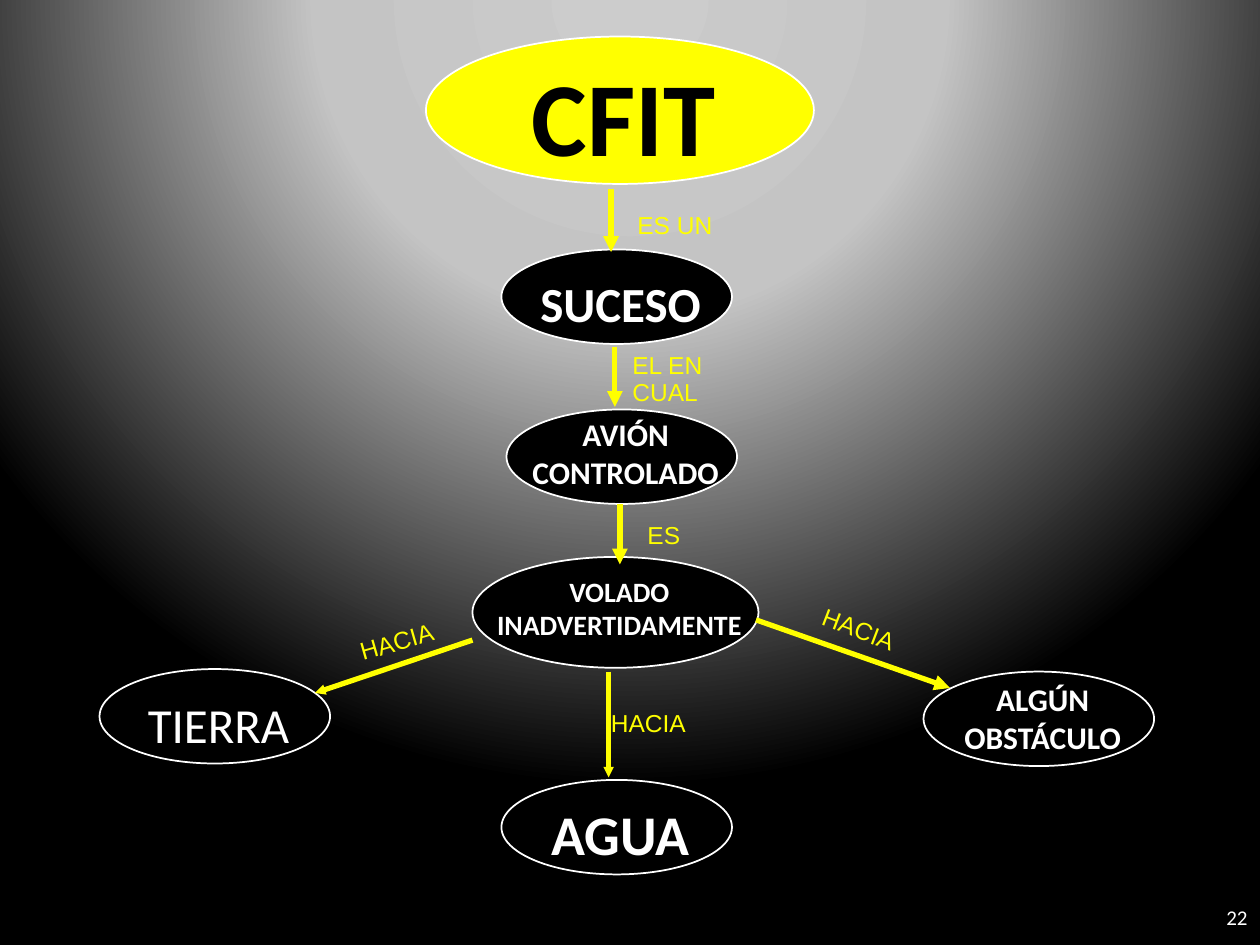
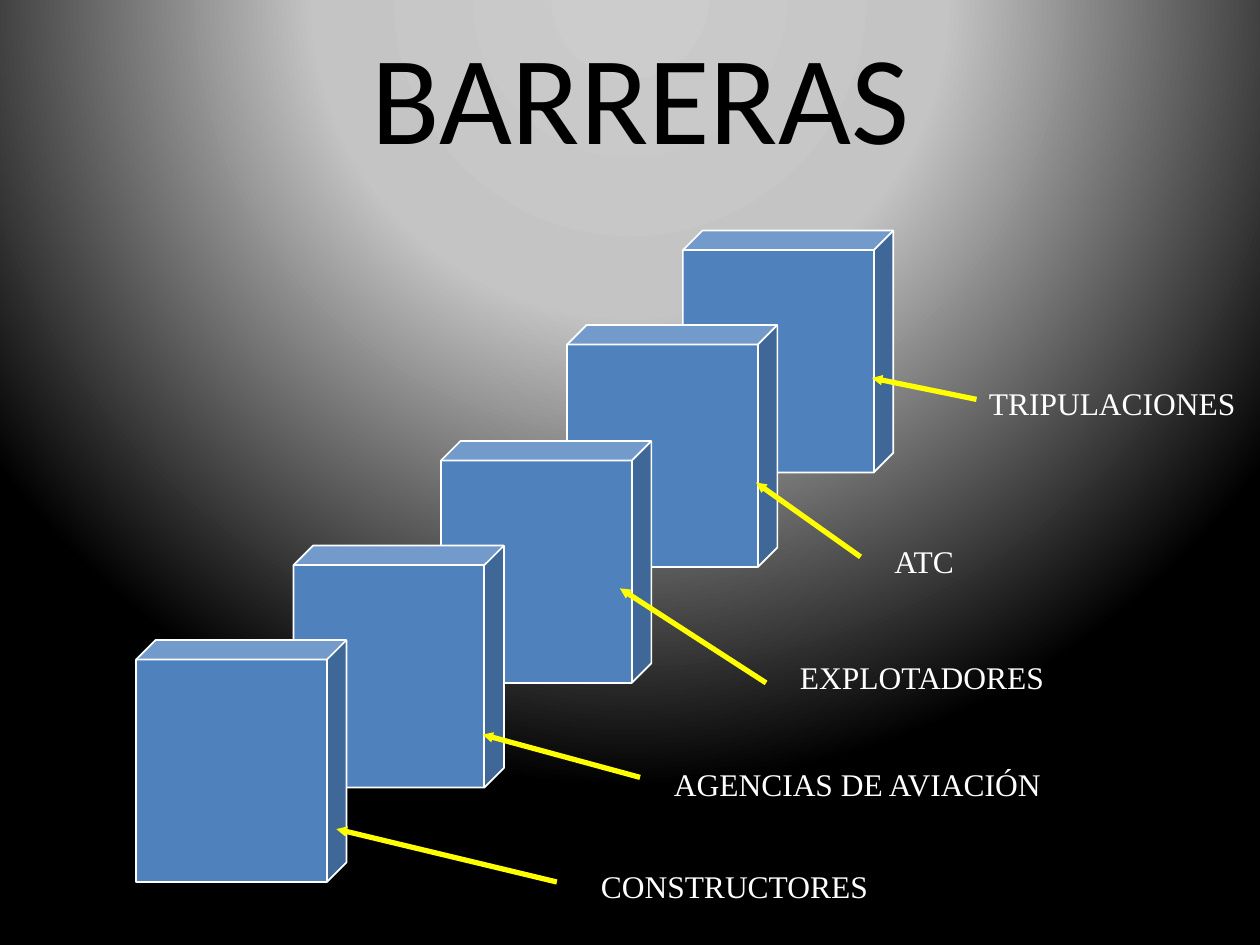
import pptx
import pptx.util
import pptx.oxml
import pptx.oxml.ns
import pptx.dml.color
import pptx.enum.shapes
import pptx.enum.text

Inches, Pt = pptx.util.Inches, pptx.util.Pt
RGB = pptx.dml.color.RGBColor.from_string
SHAPE = pptx.enum.shapes.MSO_SHAPE
ALIGN = pptx.enum.text.PP_ALIGN
ANCHOR = pptx.enum.text.MSO_ANCHOR
qn, NS = pptx.oxml.ns.qn, pptx.oxml.ns.nsdecls("a")

HUE = {"yellow": "FFFF00", "black": "000000", "white": "FFFFFF",
       "blue": "4F81BD", "pale": "CCCCCC", "gray": "C4C4C4"}


def write(shapes, box, text, size, hue="white", font="Calibri",
          bold=False, align=ALIGN.CENTER, anchor=ANCHOR.MIDDLE):
    item = shapes.add_textbox(*map(Inches, box))
    frame = item.text_frame
    frame.word_wrap = True
    frame.vertical_anchor = anchor
    frame.text = text
    if align == ALIGN.LEFT:
        frame.margin_right = 0
    for para in frame.paragraphs:
        para.alignment = align
        para.font.size = Pt(size)
        para.font.name = font
        para.font.bold = bold
        para.font.color.rgb = RGB(HUE[hue])
    return item


def arrow(shapes, ends, head="med"):
    kind = pptx.enum.shapes.MSO_CONNECTOR.STRAIGHT
    line = shapes.add_connector(kind, *map(Inches, ends))
    line.line.color.rgb = RGB(HUE["yellow"])
    line.line.width = Pt(3)
    tip = f'<a:tailEnd {NS} type="triangle" w="{head}" len="{head}"/>'
    line.line._get_or_add_ln().append(pptx.oxml.parse_xml(tip))
    line._element.spPr.append(pptx.oxml.parse_xml(f"<a:effectLst {NS}/>"))


deck = pptx.Presentation()
deck.slide_width, deck.slide_height = Inches(10), Inches(7.5)
blank = deck.slide_layouts[6]

# Spotlight background, shared through the master
master = deck.slide_master
master.background.fill.solid()
back = master.element.find(".//" + qn("p:bgPr"))
stops = "".join(
    f'<a:gs pos="{pos}000"><a:srgbClr val="{HUE[name]}"/></a:gs>'
    for pos, name in [(0, "pale"), (40, "gray"), (100, "black")])
back.replace(back[0], pptx.oxml.parse_xml(
    f'<a:gradFill {NS} rotWithShape="1"><a:gsLst>{stops}</a:gsLst>'
    '<a:path path="circle"><a:fillToRect l="50000" t="-80000" r="50000" '
    'b="180000"/></a:path></a:gradFill>'))

# Slide 1: concept map
shapes = deck.slides.add_slide(blank).shapes
write(shapes, (7.44, 7.05, 2.56, 0.45), "22", 12, align=ALIGN.RIGHT)

# text, left, top, width, height, text top, size, bold
nodes = [
    ("CFIT", 3.38, 0.29, 3.08, 1.17, 0.58, 60, True),
    ("SUCESO", 3.98, 1.98, 1.83, 0.75, 2.08, 28, True),
    ("AVIÓN CONTROLADO", 4.02, 3.25, 1.83, 0.75, 3.27, 18, True),
    ("VOLADO INADVERTIDAMENTE", 3.75, 4.42, 2.27, 0.88, 4.5, 16, True),
    ("TIERRA", 0.79, 5.31, 1.83, 0.75, 5.42, 28, False),
    ("AGUA", 3.98, 6.19, 1.83, 0.75, 6.29, 32, True),
    ("ALGÚN OBSTÁCULO", 7.33, 5.33, 1.83, 0.75, 5.37, 18, True),
]
for text, left, top, wide, high, mark, size, bold in nodes:
    first = text == "CFIT"
    oval = shapes.add_shape(SHAPE.OVAL, *map(Inches, (left, top, wide, high)))
    oval.shadow.inherit = False
    oval.fill.solid()
    oval.fill.fore_color.rgb = RGB(HUE["yellow" if first else "black"])
    oval.line.color.rgb = RGB(HUE["white"])
    oval.line.width = Pt(1)
    write(shapes, (left + 0.02, mark, wide + 0.02, 0.65), text, size,
          "black" if first else "white", bold=bold)

for ends, head in [
    ((4.85, 1.5, 4.85, 2), "med"),
    ((4.88, 2.75, 4.88, 3.23), "med"),
    ((4.92, 4, 4.92, 4.48), "med"),
    ((6, 4.92, 7.54, 5.46), "med"),
    ((3.75, 5.08, 2.5, 5.5), "sm"),
    ((4.83, 5.33, 4.83, 6.17), "sm"),
]:
    arrow(shapes, ends, head)

# text, box, turn, line spacing
links = [
    ("ES UN", (4.96, 1.62, 0.8, 0.33), 0, 1),
    ("EL EN\nCUAL", (4.92, 2.83, 1.19, 0.45), 0, 0.5),
    ("ES", (5.04, 4.08, 0.46, 0.33), 0, 1),
    ("HACIA", (2.75, 4.92, 0.82, 0.33), 344.1, 1),
    ("HACIA", (4.75, 5.67, 0.82, 0.22), 0, 0.5),
    ("HACIA", (6.42, 4.83, 0.82, 0.33), 20.9, 1),
]
for text, box, turn, space in links:
    label = write(shapes, box, text, 14, "yellow", "Arial",
                  align=ALIGN.LEFT, anchor=ANCHOR.TOP)
    label.rotation = turn
    for rank, para in enumerate(label.text_frame.paragraphs):
        para.line_spacing = space
        para.space_before = Pt(7 * rank)

# Slide 2: barriers, from the farthest to the nearest
shapes = deck.slides.add_slide(blank).shapes
write(shapes, (1.25, 0.25, 7.67, 1), "BARRERAS", 72, "black")

# text, cube corner, label box, arrow
walls = [
    ("TRIPULACIONES", (5.42, 1.83), (7.75, 3, 2.25), (7.75, 3.17, 6.92, 3)),
    ("ATC", (4.5, 2.58), (7, 4.25, 3), (6.83, 4.42, 6, 3.83)),
    ("EXPLOTADORES", (3.5, 3.5), (6.25, 5.17, 3.08), (6.08, 5.42, 4.92, 4.67)),
    ("AGENCIAS DE AVIACIÓN", (2.33, 4.33), (5.25, 6.02, 3.58),
     (5.08, 6.17, 3.83, 5.83)),
    ("CONSTRUCTORES", (1.08, 5.08), (4.67, 6.83, 3.08), (4.42, 7, 2.67, 6.58)),
]
for text, spot, box, ends in walls:
    group = shapes.add_group_shape().shapes
    cube = group.add_shape(SHAPE.CUBE, *map(Inches, (*spot, 1.67, 1.92)))
    cube.adjustments[0] = 0.093
    cube.shadow.inherit = False
    cube.fill.solid()
    cube.fill.fore_color.rgb = RGB(HUE["blue"])
    cube.line.color.rgb = RGB(HUE["white"])
    cube.line.width = Pt(1)
    write(group, (*box, 0.4), text, 18, font="Times New Roman",
          align=ALIGN.LEFT, anchor=ANCHOR.TOP)
    arrow(group, ends, "sm")

deck.save("out.pptx")
